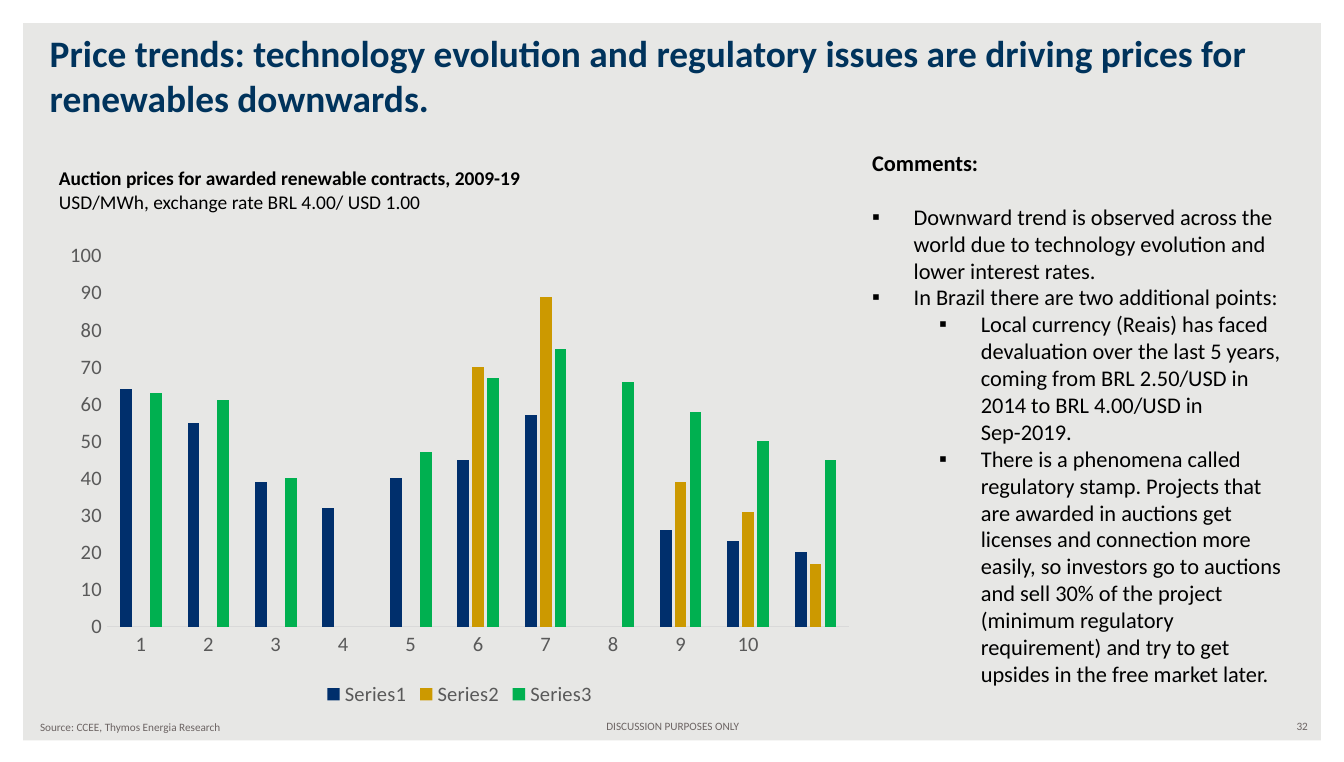
from lxml.etree import SubElement
from pptx import Presentation
from pptx.chart.data import CategoryChartData
from pptx.dml.color import RGBColor
from pptx.enum.chart import XL_CHART_TYPE, XL_LEGEND_POSITION, XL_TICK_MARK
from pptx.enum.shapes import MSO_SHAPE
from pptx.enum.text import MSO_ANCHOR, MSO_AUTO_SIZE, PP_ALIGN
from pptx.oxml.ns import qn
from pptx.util import Inches, Pt

FONT = "Calibri"
BACKGROUND = RGBColor(0xE7, 0xE7, 0xE5)
WHITE = RGBColor(0xFF, 0xFF, 0xFF)
BLACK = RGBColor(0, 0, 0)
TITLE_BLUE = RGBColor(0x00, 0x33, 0x5C)
FOOTER_GRAY = RGBColor(0x6C, 0x64, 0x63)
AXIS_GRAY = RGBColor(0x59, 0x59, 0x59)
LINE_GRAY = RGBColor(0xD9, 0xD9, 0xD9)
NAVY = RGBColor(0x00, 0x2F, 0x6C)
GOLD = RGBColor(0xCC, 0x99, 0x00)
GREEN = RGBColor(0x00, 0xB0, 0x50)

SERIES = [
    ("Series1", NAVY, (64, 55, 39, 32, 40, 45, 57, None, 26, 23, 20)),
    ("Series2", GOLD, (None, None, None, None, None, 70, 89, None, 39, 31, 17)),
    ("Series3", GREEN, (63, 61, 40, None, 47, 67, 75, 66, 58, 50, 45)),
]
# Bullet level and text
COMMENTS = [
    (0, "Downward trend is observed across the world due to technology "
        "evolution and lower interest rates."),
    (0, "In Brazil there are two additional points:"),
    (1, "Local currency (Reais) has faced devaluation over the last 5 years, "
        "coming from BRL 2.50/USD in 2014 to BRL 4.00/USD in Sep-2019."),
    (1, "There is a phenomena called regulatory stamp. Projects that are "
        "awarded in auctions get licenses and connection more easily, so "
        "investors go to auctions and sell 30% of the project (minimum "
        "regulatory requirement) and try to get upsides in the free market "
        "later."),
]


def set_font(font, size, color, bold=False):
    font.name = FONT
    font.size = Pt(size)
    font.bold = bold
    font.color.rgb = color


def add_bullet(paragraph, level):
    paragraph.level = level
    properties = paragraph._p.get_or_add_pPr()
    properties.set("marL", str(Inches(0.31 + 0.5 * level)))
    properties.set("indent", str(Inches(-0.31)))
    SubElement(properties, qn("a:buFont")).set("typeface", "Arial")
    SubElement(properties, qn("a:buChar")).set("char", "▪")


def write(frame, text, size=12, color=BLACK, bold=False, align=PP_ALIGN.LEFT,
          level=None, space_before=0):
    """Fill the empty first paragraph, or append a new one."""
    paragraph = frame.paragraphs[0] if not frame.text else frame.add_paragraph()
    paragraph.alignment = align
    if space_before:
        paragraph.space_before = Pt(space_before)
    if level is not None:
        add_bullet(paragraph, level)
    run = paragraph.add_run()
    run.text = text
    set_font(run.font, size, color, bold)


def place(shape, left, top, width, height):
    shape.left, shape.top = Inches(left), Inches(top)
    shape.width, shape.height = Inches(width), Inches(height)


def add_text_frame(slide, left, top, width, height, anchor=MSO_ANCHOR.TOP):
    box = slide.shapes.add_textbox(
        Inches(left), Inches(top), Inches(width), Inches(height))
    box.text_frame.word_wrap = True
    box.text_frame.vertical_anchor = anchor
    return box.text_frame


def add_border(slide):
    border = slide.shapes.add_shape(
        MSO_SHAPE.FRAME, 0, 0, Inches(10), Inches(5.68))
    border.adjustments[0] = 0.03
    border.shadow.inherit = False
    border.fill.solid()
    border.fill.fore_color.rgb = WHITE
    border.line.fill.background()


def add_title(slide, text):
    title = slide.shapes.title
    place(title, 0.27, 0.17, 9.43, 0.77)
    frame = title.text_frame
    frame.auto_size = MSO_AUTO_SIZE.NONE
    frame.word_wrap = True
    frame.vertical_anchor = MSO_ANCHOR.BOTTOM
    write(frame, text, size=20, color=TITLE_BLUE, bold=True)


def add_footer(slide, text, left, top, width, align):
    frame = add_text_frame(slide, left, top, width, 0.2, MSO_ANCHOR.MIDDLE)
    write(frame, text, size=6, color=FOOTER_GRAY, align=align)


def add_price_chart(slide):
    data = CategoryChartData(number_format="#,##0")
    # The last group of columns carries no label
    data.categories = [str(number) for number in range(1, 11)] + [""]
    for name, _, values in SERIES:
        data.add_series(name, values)
    chart = slide.shapes.add_chart(
        XL_CHART_TYPE.COLUMN_CLUSTERED, Inches(0.4), Inches(1.74),
        Inches(6.04), Inches(3.56), data).chart
    set_font(chart.font, 11, AXIS_GRAY)
    chart.has_title = False
    chart.has_legend = True
    chart.legend.position = XL_LEGEND_POSITION.BOTTOM
    chart.legend.include_in_layout = False
    set_font(chart.legend.font, 11, AXIS_GRAY)

    plot = chart.plots[0]
    plot.vary_by_categories = False
    plot.gap_width = 219
    plot.overlap = -27
    for series, (_, color, _) in zip(plot.series, SERIES):
        series.format.fill.solid()
        series.format.fill.fore_color.rgb = color

    for axis in (chart.category_axis, chart.value_axis):
        axis.has_major_gridlines = False
        axis.major_tick_mark = axis.minor_tick_mark = XL_TICK_MARK.NONE
        set_font(axis.tick_labels.font, 11, AXIS_GRAY)
    chart.category_axis.format.line.color.rgb = LINE_GRAY
    chart.category_axis.format.line.width = Pt(0.75)
    values = chart.value_axis
    values.minimum_scale, values.maximum_scale = 0, 100
    values.major_unit = 10
    values.tick_labels.number_format = "#,##0"
    values.tick_labels.number_format_is_linked = False
    values.format.line.fill.background()


def add_comments(slide):
    frame = add_text_frame(slide, 6.39, 1.06, 3.27, 4.14)
    write(frame, "Comments:", bold=True)
    for index, (level, text) in enumerate(COMMENTS):
        write(frame, text, level=level, space_before=0 if index else 14.5)


def main():
    presentation = Presentation()
    presentation.slide_width = Inches(10)
    presentation.slide_height = Inches(5.67)
    slide = presentation.slides.add_slide(presentation.slide_layouts[5])
    slide.background.fill.solid()
    slide.background.fill.fore_color.rgb = BACKGROUND

    # Border, title and footers
    add_border(slide)
    add_title(slide, "Price trends: technology evolution and regulatory issues "
                     "are driving prices for renewables downwards.")
    add_footer(slide, "DISCUSSION PURPOSES ONLY", 3.42, 5.3, 3.17, PP_ALIGN.CENTER)
    add_footer(slide, "32", 7.5, 5.3, 2.33, PP_ALIGN.RIGHT)
    add_footer(slide, "Source: CCEE, Thymos Energia Research",
               0.2, 5.31, 3.17, PP_ALIGN.LEFT)

    # Chart with its heading
    heading = add_text_frame(slide, 0.34, 1.19, 5.75, 0.45)
    write(heading, "Auction prices for awarded renewable contracts, 2009-19",
          size=10.4, bold=True)
    write(heading, "USD/MWh, exchange rate BRL 4.00/ USD 1.00", size=10.4)
    add_price_chart(slide)

    # Right column
    add_comments(slide)
    presentation.save("out.pptx")


if __name__ == "__main__":
    main()
